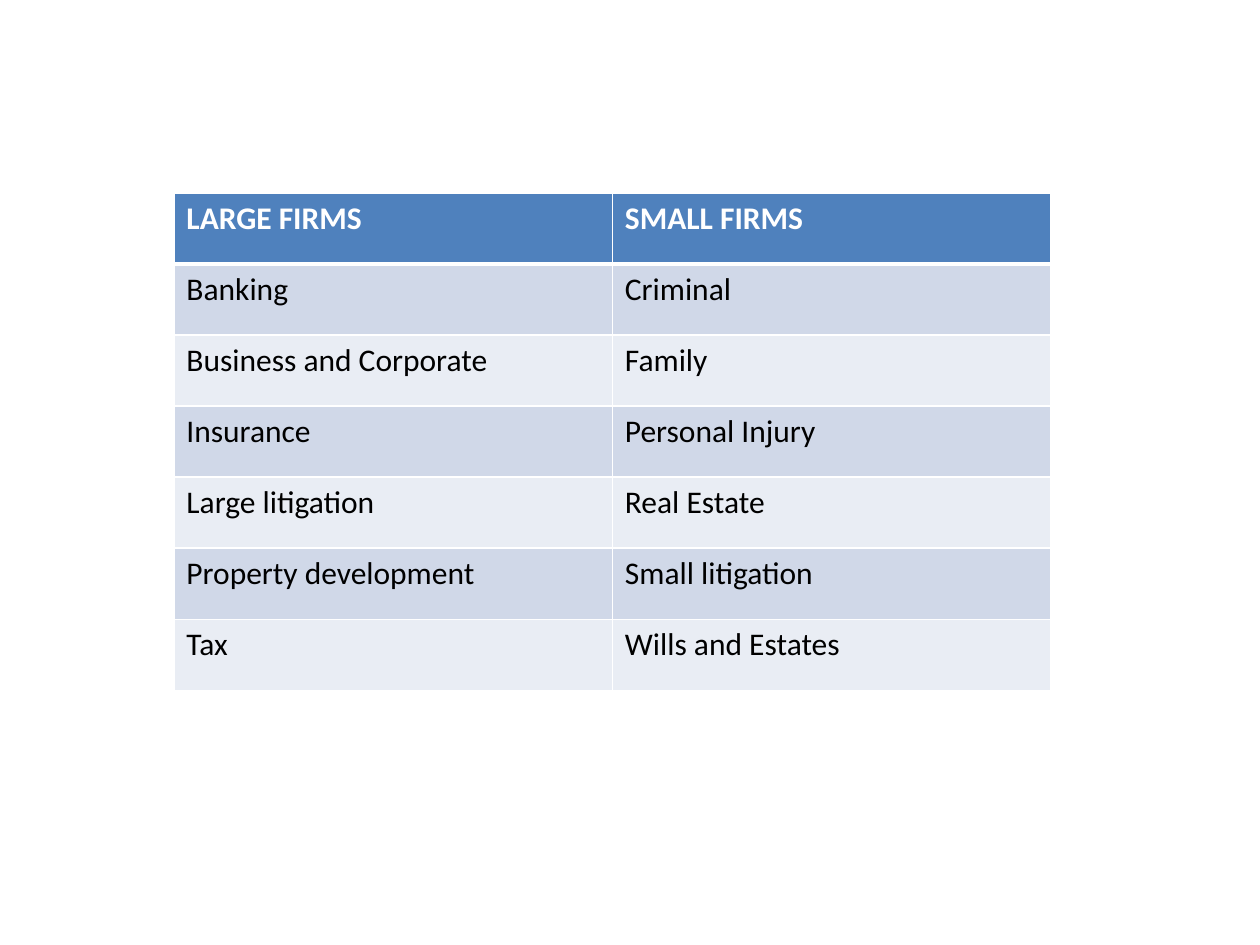
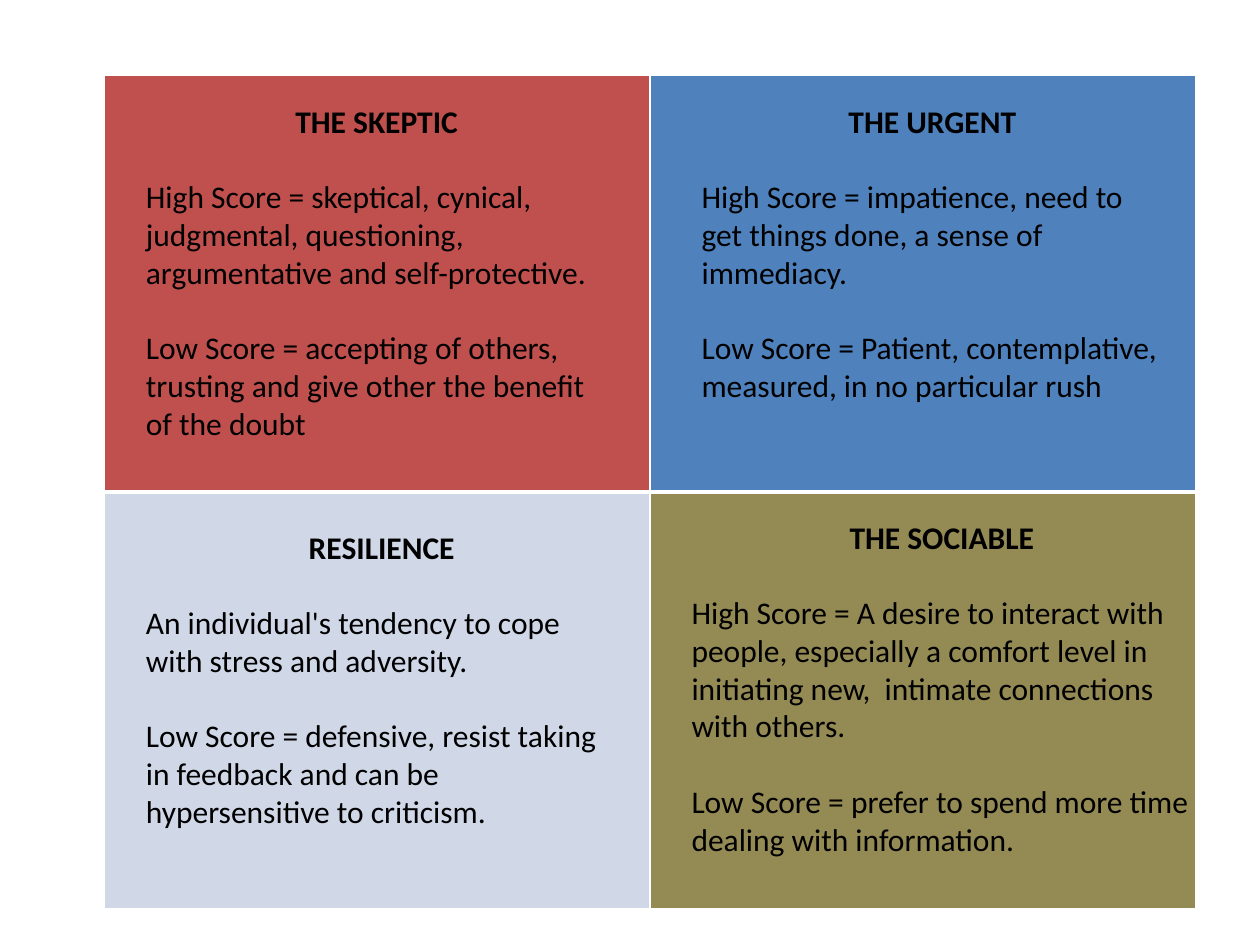
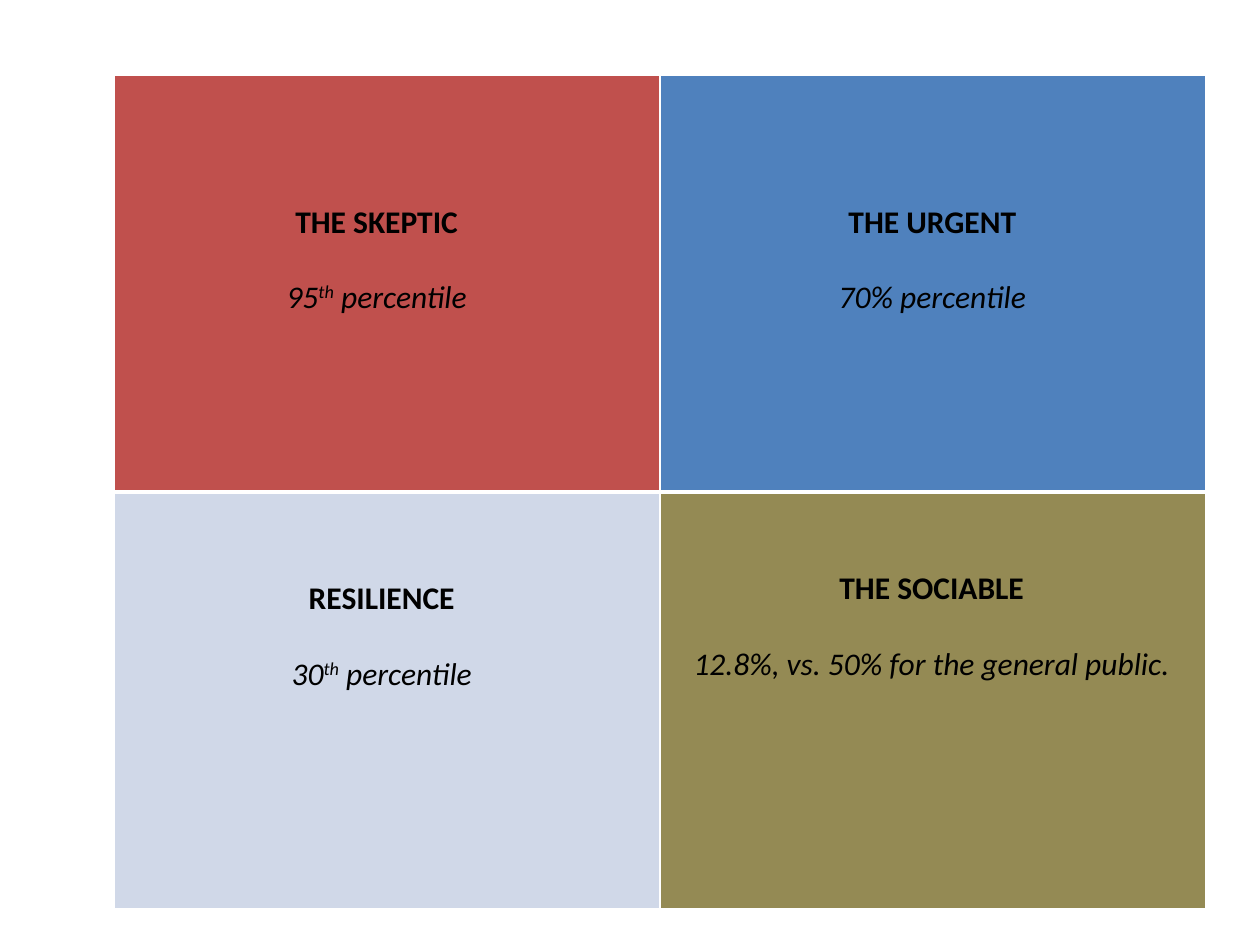
import dataclasses

import lxml.etree
import pptx
import pptx.dml.color
import pptx.enum.text
import pptx.oxml.ns
import pptx.util

Inches = pptx.util.Inches
Pt = pptx.util.Pt
RGBColor = pptx.dml.color.RGBColor
ALIGN = pptx.enum.text.PP_ALIGN


@dataclasses.dataclass(frozen=True)
class Theme:
    """Colours, font and sizes shared by the slides."""

    font: str = "Calibri"
    size: float = 18
    gap: float = 21.5
    text: str = "000000"
    white: str = "FFFFFF"
    blue: str = "4F81BD"
    red: str = "C0504D"
    olive: str = "948A54"
    band_dark: str = "D0D8E8"
    band_light: str = "E9EDF4"
    thin_rule: float = 1
    thick_rule: float = 3


THEME = Theme()

FIRM_ROWS = [
    ("LARGE FIRMS", "SMALL FIRMS"),
    ("Banking", "Criminal"),
    ("Business and Corporate", "Family"),
    ("Insurance", "Personal Injury"),
    ("Large litigation", "Real Estate"),
    ("Property development", "Small litigation"),
    ("Tax", "Wills and Estates"),
]

TRAIT_MEANINGS = [
    ("THE SKEPTIC", (1.06, 0.76, 3.86, 2.83), [
        "High Score = skeptical, cynical, judgmental, questioning, "
        "argumentative and self-protective.",
        "Low Score = accepting of others, trusting and give other the "
        "benefit of the doubt"]),
    ("THE SOCIABLE", (5.39, 4.06, 4.17, 2.83), [
        "High Score = A desire to interact with people, especially a comfort "
        "level in initiating new,  intimate connections with others.",
        "Low Score = prefer to spend more time dealing with information."]),
    ("THE URGENT", (5.47, 0.76, 3.86, 2.83), [
        "High Score = impatience, need to get things done, a sense of "
        "immediacy.",
        "Low Score = Patient, contemplative, measured, in no particular "
        "rush"]),
    ("RESILIENCE", (1.06, 4.14, 3.94, 2.52), [
        "An individual's tendency to cope with stress and adversity.",
        "Low Score = defensive, resist taking in feedback and can be "
        "hypersensitive to criticism."]),
]

TRAIT_SCORES = [
    ("THE SKEPTIC", (1.06, 1.55, 3.86, 1.31), ("95", "th", " percentile")),
    ("THE SOCIABLE", (5.31, 4.46, 4.17, 1.01),
     ("12.8%, vs. 50% for the general public.",)),
    ("THE URGENT", (5.47, 1.55, 3.86, 1.01), ("70% percentile",)),
    ("RESILIENCE", (1.06, 4.54, 3.94, 1.01), ("30", "th", " percentile")),
]


def style_para(para, color=THEME.text, bold=False, italic=False):
    """Set the shared font on a paragraph."""
    font = para.font
    font.name = THEME.font
    font.size = Pt(THEME.size)
    font.color.rgb = RGBColor.from_string(color)
    font.bold = bold
    font.italic = italic


def set_border(cell, side, width):
    """Draw a white rule on one side of a cell."""
    qualify = pptx.oxml.ns.qn
    line = lxml.etree.SubElement(
        cell._tc.get_or_add_tcPr(), qualify(f"a:ln{side}"), w=str(Pt(width)))
    fill = lxml.etree.SubElement(line, qualify("a:solidFill"))
    lxml.etree.SubElement(fill, qualify("a:srgbClr"), val=THEME.white)


def add_grid(page, left, top, width, height, fills):
    """Add a table of filled cells with a thick rule under its first row."""
    frame = page.shapes.add_table(
        len(fills), len(fills[0]),
        Inches(left), Inches(top), Inches(width), Inches(height))
    table = frame.table
    table.first_row = False
    table.horz_banding = False
    for row_index, row_fills in enumerate(fills):
        top_rule = THEME.thick_rule if row_index == 1 else THEME.thin_rule
        bottom_rule = THEME.thick_rule if row_index == 0 else THEME.thin_rule
        rules = {"L": THEME.thin_rule, "R": THEME.thin_rule,
                 "T": top_rule, "B": bottom_rule}
        for column_index, color in enumerate(row_fills):
            cell = table.cell(row_index, column_index)
            for side, rule in rules.items():
                set_border(cell, side, rule)
            cell.fill.solid()
            cell.fill.fore_color.rgb = RGBColor.from_string(color)
    return table


def add_firm_table(page):
    """Add the comparison of large and small firms."""
    bands = [THEME.band_light, THEME.band_dark]
    fills = [[THEME.blue if index == 0 else bands[index % 2]] * 2
             for index in range(len(FIRM_ROWS))]
    table = add_grid(page, 1.38, 1.53, 6.96, 3.95, fills)
    for row_index, names in enumerate(FIRM_ROWS):
        header = row_index == 0
        for column_index, name in enumerate(names):
            para = table.cell(row_index, column_index).text_frame.paragraphs[0]
            para.text = name
            style_para(para, THEME.white if header else THEME.text, header)


def add_quadrants(page, left):
    """Add the four coloured fields of the traits."""
    add_grid(page, left, 0.6, 8.66, 6.61,
             [[THEME.red, THEME.blue], [THEME.band_dark, THEME.olive]])


def add_trait_box(page, heading, place):
    """Add a text box with a centred bold heading and return its frame."""
    box = page.shapes.add_textbox(*map(Inches, place))
    frame = box.text_frame
    frame.word_wrap = True
    para = frame.paragraphs[0]
    para.text = heading
    para.alignment = ALIGN.CENTER
    style_para(para, bold=True)
    return frame


def add_gapped_para(frame, italic=False):
    """Add a paragraph one line below the text before it."""
    para = frame.add_paragraph()
    para.space_before = Pt(THEME.gap)
    style_para(para, italic=italic)
    return para


def add_meaning(page, heading, place, statements):
    """Add a trait with the meaning of its scores."""
    frame = add_trait_box(page, heading, place)
    for statement in statements:
        add_gapped_para(frame).text = statement


def add_score(page, heading, place, pieces):
    """Add a trait with its score, raising an ordinal ending."""
    para = add_gapped_para(add_trait_box(page, heading, place), italic=True)
    para.alignment = ALIGN.CENTER
    for piece in pieces:
        span = para.add_run()
        span.text = piece
        if piece == "th":
            span._r.get_or_add_rPr().set("baseline", "30000")


def main():
    """Build the three slides and save the deck."""
    deck = pptx.Presentation()
    deck.slide_width, deck.slide_height = Inches(10), Inches(7.5)
    blank = deck.slide_layouts[6]
    firms, meanings, scores = [deck.slides.add_slide(blank) for _ in range(3)]
    add_firm_table(firms)
    add_quadrants(meanings, 0.83)
    for trait in TRAIT_MEANINGS:
        add_meaning(meanings, *trait)
    add_quadrants(scores, 0.91)
    for trait in TRAIT_SCORES:
        add_score(scores, *trait)
    deck.save("out.pptx")


if __name__ == "__main__":
    main()
